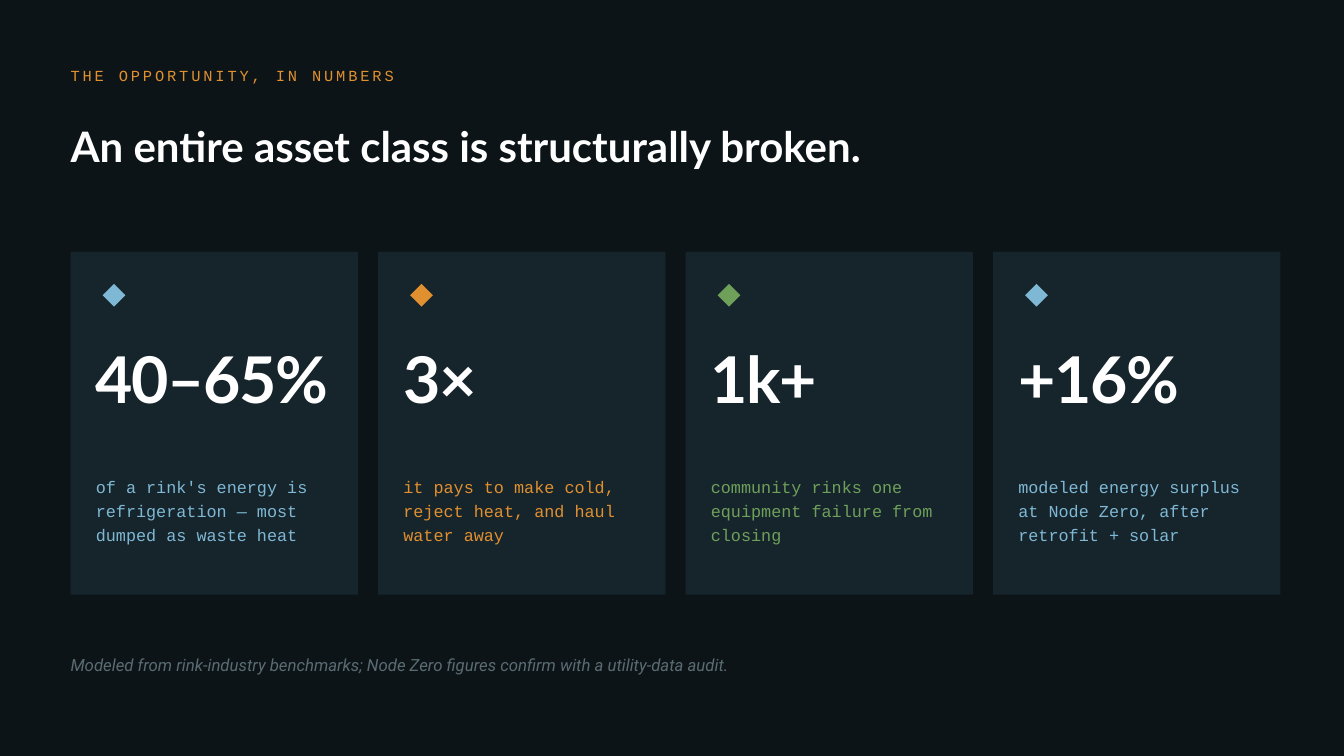
from pptx import Presentation
from pptx.dml.color import RGBColor
from pptx.enum.shapes import MSO_SHAPE
from pptx.enum.text import MSO_ANCHOR
from pptx.util import Emu, Pt

RECTANGLE = MSO_SHAPE.RECTANGLE
MIDDLE = MSO_ANCHOR.MIDDLE

EMU_PER_PX = 9144  # 100 px to the inch
SLIDE_WIDTH, SLIDE_HEIGHT = 1333, 750
MARGIN = 70
CARD_TOP, CARD_WIDTH, CARD_HEIGHT, CARD_GAP = 250, 285, 340, 20

HEADING_FONT, MONO_FONT, NOTE_FONT = "Lato", "Courier New", "Roboto"
BACKGROUND, CARD_FILL = "0C1418", "16242C"
WHITE, MUTED = "FFFFFF", "5A6B72"
ICE, AMBER, GREEN = "7FB8D4", "E0902F", "6FA05A"

STATS = [
    ("40–65%", "of a rink's energy is refrigeration — most dumped as waste heat", ICE),
    ("3×", "it pays to make cold, reject heat, and haul water away", AMBER),
    ("1k+", "community rinks one equipment failure from closing", GREEN),
    ("+16%", "modeled energy surplus at Node Zero, after retrofit + solar", ICE),
]


def px(length):
    return Emu(length * EMU_PER_PX)


def set_fill(fill, color):
    fill.solid()
    fill.fore_color.rgb = RGBColor.from_string(color)


def add_block(slide, left, top, width, height, color):
    """Add a plain filled rectangle without line or shadow."""
    block = slide.shapes.add_shape(RECTANGLE, px(left), px(top), px(width), px(height))
    block.shadow.inherit = False
    set_fill(block.fill, color)
    block.line.fill.background()
    return block


def add_label(slide, left, top, width, height, text, font, size, color,
              bold=False, italic=False, tracking=0, leading=None):
    """Add one paragraph; size, tracking and leading are in points."""
    label = slide.shapes.add_textbox(px(left), px(top), px(width), px(height))
    frame = label.text_frame
    frame.word_wrap = True
    frame.vertical_anchor = MIDDLE
    frame.margin_left = frame.margin_right = frame.margin_top = frame.margin_bottom = 0
    frame.text = text
    paragraph = frame.paragraphs[0]
    if leading:
        paragraph.line_spacing = Pt(leading)
    run = paragraph.runs[0]
    run.font.name = font
    run.font.size = Pt(size)
    run.font.bold = bold
    run.font.italic = italic
    run.font.color.rgb = RGBColor.from_string(color)
    if tracking:
        run.font._element.set("spc", str(tracking * 100))


def add_header(slide, left, top):
    add_label(slide, left, top, 500, 30, "THE OPPORTUNITY, IN NUMBERS",
              MONO_FONT, 11, AMBER, tracking=2)
    add_label(slide, left, top + 40, 1200, 90,
              "An entire asset class is structurally broken.",
              HEADING_FONT, 30, WHITE, bold=True)


def add_stat_card(slide, left, top, width, height, figure, caption, accent):
    add_block(slide, left, top, width, height, CARD_FILL)
    diamond = add_block(slide, left + 35, top + 35, 16, 16, accent)
    diamond.rotation = 45
    add_label(slide, left + 25, top + 70, width - 45, 110, figure,
              HEADING_FONT, 46, WHITE, bold=True, tracking=-1)
    add_label(slide, left + 25, top + 190, width - 50, 130, caption,
              MONO_FONT, 12, accent, leading=17)


def add_stat_row(slide, left, top):
    for index, (figure, caption, accent) in enumerate(STATS):
        card_left = left + index * (CARD_WIDTH + CARD_GAP)
        add_stat_card(slide, card_left, top, CARD_WIDTH, CARD_HEIGHT,
                      figure, caption, accent)


def add_footnote(slide, left, top):
    add_label(slide, left, top, 1200, 40,
              "Modeled from rink-industry benchmarks; "
              "Node Zero figures confirm with a utility-data audit.",
              NOTE_FONT, 12, MUTED, italic=True)


def main():
    presentation = Presentation()
    presentation.slide_width = px(SLIDE_WIDTH)
    presentation.slide_height = px(SLIDE_HEIGHT)
    slide = presentation.slides.add_slide(presentation.slide_layouts[6])
    set_fill(slide.background.fill, BACKGROUND)
    add_header(slide, MARGIN, 60)
    add_stat_row(slide, MARGIN, CARD_TOP)
    add_footnote(slide, MARGIN, 640)
    presentation.save("out.pptx")


if __name__ == "__main__":
    main()
